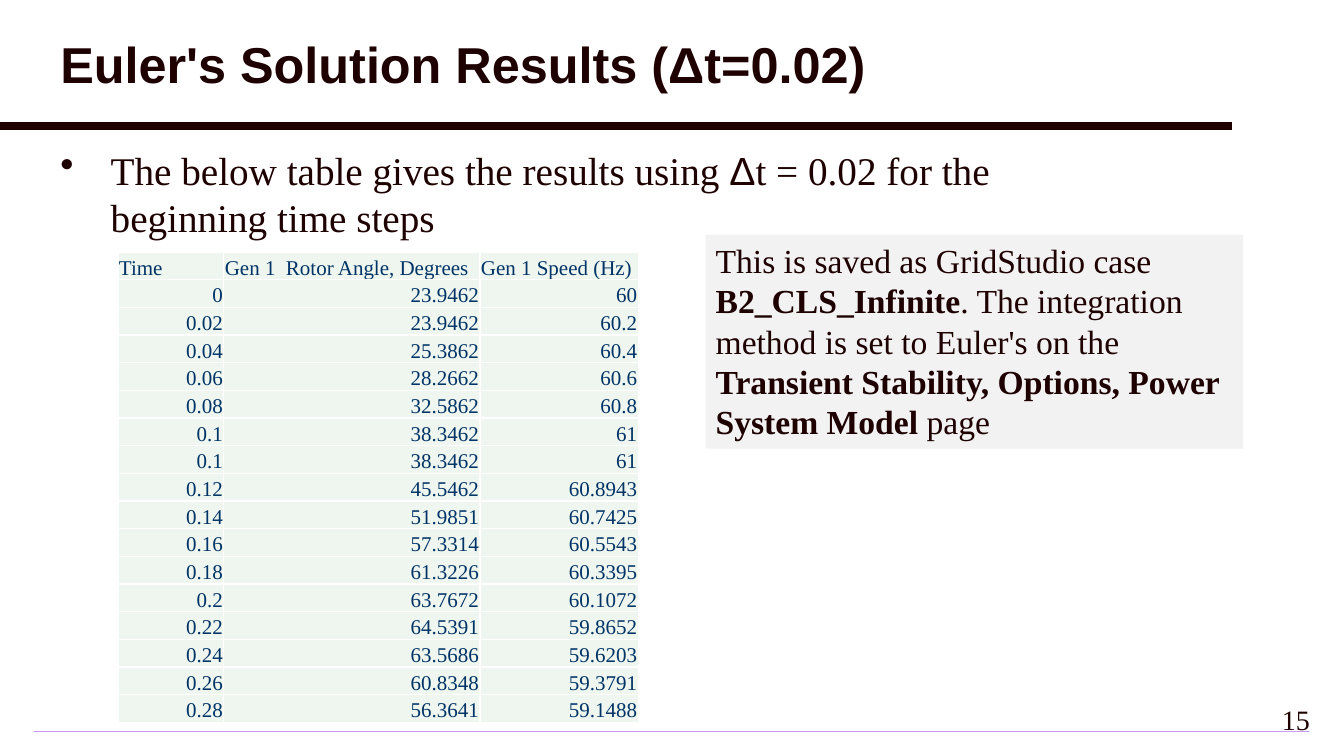
"""Build the slide of Euler's method results for a time step of 0.02."""
from lxml import etree
from pptx import Presentation, util as u
from pptx.dml.color import RGBColor
from pptx.enum import shapes, text
from pptx.oxml import parse_xml
from pptx.oxml.ns import nsdecls, qn

DARK = RGBColor(0x1E, 0x00, 0x00)
NAVY = RGBColor(0x00, 0x33, 0x66)
MINT = RGBColor(0xEF, 0xF6, 0xEF)
GRAY = RGBColor(0xF2, 0xF2, 0xF2)
LILAC = RGBColor(0xCC, 0x99, 0xFF)
PALE = RGBColor(0xF3, 0xEB, 0xFF)
SERIF, SANS = "Times New Roman", "Arial"

TITLE = [("Euler's Solution Results (Δt=0.02)", {"bold": True, "name": SANS})]
BODY = [
    ("The below table gives the results using ", {}),
    ("Δ", {"name": SANS}),
    ("t = 0.02 for the beginning time steps", {}),
]
NOTE = [
    ("This is saved as GridStudio case", {}),
    ("\n", {}),
    ("B2_CLS_Infinite", {"bold": True}),
    (". The integration", {}),
    ("\n", {}),
    ("method is set to Euler's on the ", {}),
    ("Transient Stability, Options, Power System Model ", {"bold": True}),
    ("page", {}),
]
PAGE = [("15", {})]
HEAD = ("Time", "Gen 1  Rotor Angle, Degrees", "Gen 1 Speed (Hz)")
STEPS = [
    ("0", "23.9462", "60"),
    ("0.02", "23.9462", "60.2"),
    ("0.04", "25.3862", "60.4"),
    ("0.06", "28.2662", "60.6"),
    ("0.08", "32.5862", "60.8"),
    ("0.1", "38.3462", "61"),
    ("0.1", "38.3462", "61"),
    ("0.12", "45.5462", "60.8943"),
    ("0.14", "51.9851", "60.7425"),
    ("0.16", "57.3314", "60.5543"),
    ("0.18", "61.3226", "60.3395"),
    ("0.2", "63.7672", "60.1072"),
    ("0.22", "64.5391", "59.8652"),
    ("0.24", "63.5686", "59.6203"),
    ("0.26", "60.8348", "59.3791"),
    ("0.28", "56.3641", "59.1488"),
]
COLS = (105, 254, 157)
TABLE = (117, 250, sum(COLS), 467)
EDGE = ('<a:{} w="12700" {}><a:solidFill><a:srgbClr val="FFFFFF"/>'
        '</a:solidFill></a:{}>')


def px(n):
    """Turn px, at 100 to the inch, into EMU."""
    return u.Emu(n * 9144)


def write(frame, runs, size, color=DARK, align=text.PP_ALIGN.LEFT,
          anchor=text.MSO_ANCHOR.TOP, bullet=False, lines=None):
    """Write formatted runs as one paragraph."""
    frame.word_wrap = True
    frame.vertical_anchor = anchor
    para = frame.paragraphs[0]
    if bullet:
        props = para._p.get_or_add_pPr()
        props.set("marL", str(px(50)))
        props.set("indent", str(-px(50)))
        etree.SubElement(props, qn("a:buChar")).set("char", "•")
    para.alignment = align
    if lines:
        para.line_spacing = lines
    for words, style in runs:
        if words == "\n":
            para.add_line_break()
            continue
        run = para.add_run()
        run.text = words
        font = run.font
        font.size = u.Pt(size)
        font.color.rgb = color
        font.name = style.get("name", SERIF)
        font.bold = style.get("bold", False)


def box(slide, area, runs, size, **form):
    """Add a text box."""
    frame = slide.shapes.add_textbox(*map(px, area)).text_frame
    write(frame, runs, size, **form)


def block(slide, area):
    """Add a plain rectangle."""
    shape = slide.shapes.add_shape(shapes.MSO_SHAPE.RECTANGLE, *map(px, area))
    shape.shadow.inherit = False
    shape.line.fill.background()
    return shape


def rules(slide):
    """Draw the footer strip and the line under the title."""
    fill = block(slide, (33, 725, 1266, 1)).fill
    fill.gradient()
    for stop, color in zip(fill.gradient_stops, (LILAC, PALE)):
        stop.color.rgb = color
    grad = fill._xPr.find(qn("a:gradFill"))
    grad.replace(grad.find(qn("a:lin")), parse_xml(
        f'<a:path {nsdecls("a")} path="shape"><a:fillToRect l="50000" '
        't="50000" r="50000" b="50000"/></a:path>'))
    bar = slide.shapes.add_connector(
        shapes.MSO_CONNECTOR.STRAIGHT, px(0), px(125), px(1222), px(125))
    bar.line.color.rgb = DARK
    bar.line.width = u.Pt(6)
    etree.SubElement(bar._element.spPr, qn("a:effectLst"))


def results(slide):
    """Add the table of time steps."""
    rows = [HEAD] + STEPS
    table = slide.shapes.add_table(
        len(rows), len(COLS), *map(px, TABLE)).table
    table.first_row = table.horz_banding = False
    for col, width in zip(table.columns, COLS):
        col.width = px(width)
    for r, row in enumerate(rows):
        table.rows[r].height = px(TABLE[3]) // len(rows)
        align = text.PP_ALIGN.RIGHT if r else text.PP_ALIGN.LEFT
        for c, words in enumerate(row):
            cell = table.cell(r, c)
            cell.margin_left = cell.margin_right = cell.margin_top = px(1)
            cell.margin_bottom = 0
            cell.vertical_anchor = text.MSO_ANCHOR.BOTTOM
            props = cell._tc.get_or_add_tcPr()
            for side in ("lnL", "lnR", "lnT", "lnB"):
                props.append(parse_xml(EDGE.format(side, nsdecls("a"), side)))
            cell.fill.solid()
            cell.fill.fore_color.rgb = MINT
            write(cell.text_frame, [(words, {})], 15, color=NAVY,
                  align=align, anchor=text.MSO_ANCHOR.BOTTOM)


def main():
    """Compose and save the slide."""
    deck = Presentation()
    deck.slide_width, deck.slide_height = px(1333), px(750)
    slide = deck.slides.add_slide(deck.slide_layouts[6])
    rules(slide)
    box(slide, (50, 8, 1267, 117), TITLE, 36,
        anchor=text.MSO_ANCHOR.MIDDLE, lines=0.9)
    box(slide, (50, 140, 1050, 110), BODY, 28, bullet=True)
    results(slide)
    note = block(slide, (700, 233, 533, 212))
    note.fill.solid()
    note.fill.fore_color.rgb = GRAY
    write(note.text_frame, NOTE, 24)
    note.text_frame.auto_size = text.MSO_AUTO_SIZE.SHAPE_TO_FIT_TEXT
    box(slide, (1242, 692, 67, 50), PAGE, 20, align=text.PP_ALIGN.RIGHT)
    deck.save("out.pptx")


if __name__ == "__main__":
    main()
